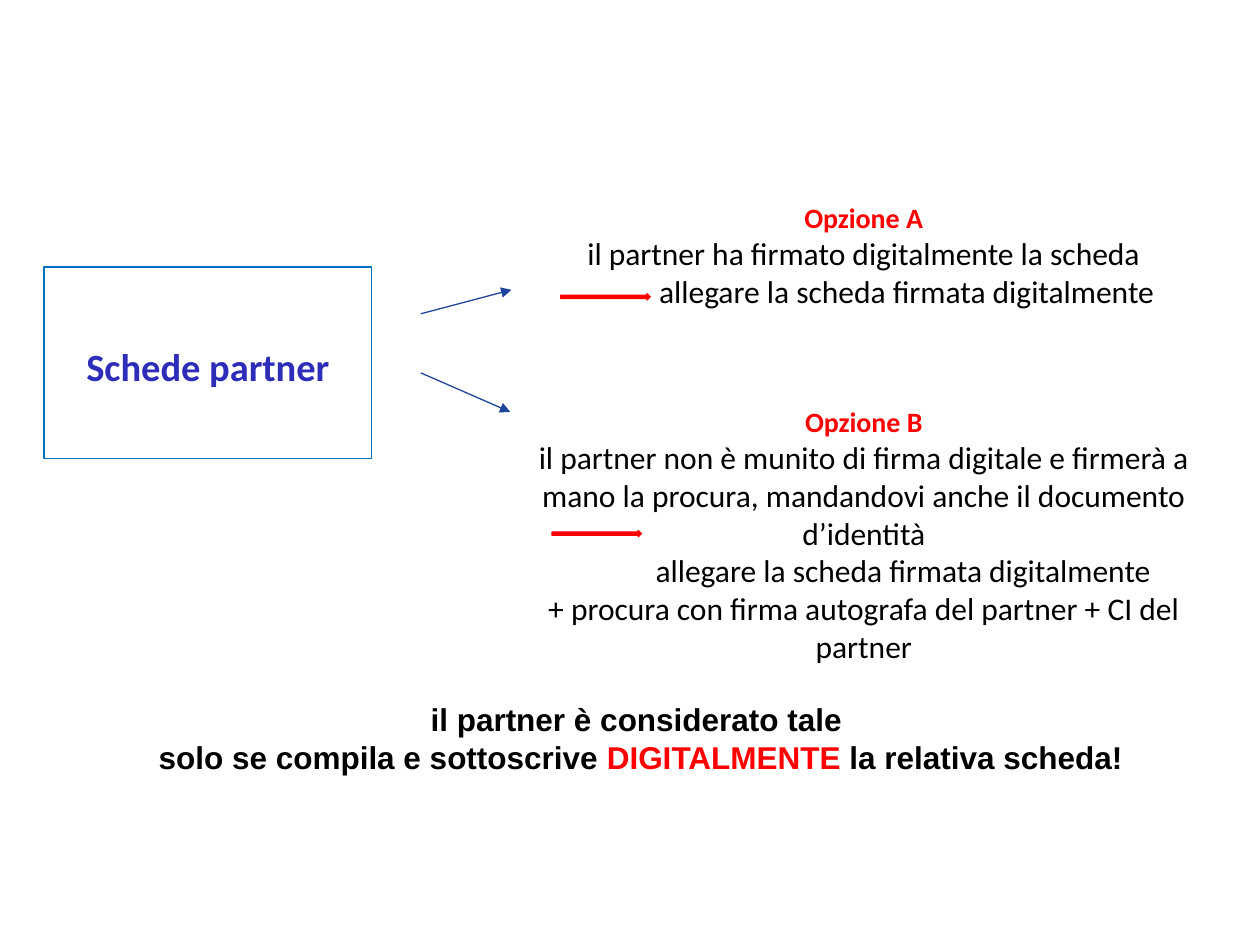
from dataclasses import dataclass

from lxml import etree
from pptx import Presentation
from pptx.dml.color import RGBColor
from pptx.enum import shapes, text
from pptx.oxml import ns
from pptx.util import Pt


@dataclass(frozen=True)
class Theme:
    """Colours, type sizes and fonts of the slide."""
    ink: str = "000000"
    alert: str = "FF0000"
    heading: str = "2D2DB9"
    frame: str = "0070C0"
    branch: str = "21449C"
    heading_size: int = 22
    body_size: int = 18
    option_size: int = 16
    body_font: str = "Calibri"
    closing_font: str = "Arial"
    hairline: float = 0.75


THEME = Theme()
CENTER, RIGHT = text.PP_ALIGN.CENTER, text.PP_ALIGN.RIGHT


def write(paragraph, words, size=THEME.body_size, color=THEME.ink,
          bold=False, font=THEME.body_font):
    """Append one formatted run to a paragraph."""
    run = paragraph.add_run()
    run.text = words
    run.font.name, run.font.size, run.font.bold = font, Pt(size), bold
    run.font.color.rgb = RGBColor.from_string(color)


def add_text_frame(slide, left, top, width, height):
    """Add a wrapping text box and return its text frame."""
    frame = slide.shapes.add_textbox(Pt(left), Pt(top), Pt(width), Pt(height)).text_frame
    frame.word_wrap = True
    return frame


def add_option(slide, box, name, lines):
    """Add a red option name above lines of (words, alignment, indent)."""
    frame = add_text_frame(slide, *box)
    title = frame.paragraphs[0]
    title.alignment = CENTER
    write(title, name, THEME.option_size, THEME.alert, True)
    for words, alignment, indent in lines:
        line = frame.add_paragraph()
        line.alignment = alignment
        if indent:
            line._p.get_or_add_pPr().set("marL", str(Pt(indent)))
        write(line, words)


def add_shape(slide, kind, left, top, width, height, line_color):
    """Add a preset shape with a thin outline and no shadow."""
    shape = slide.shapes.add_shape(kind, Pt(left), Pt(top), Pt(width), Pt(height))
    shape.shadow.inherit = False
    shape.line.color.rgb = RGBColor.from_string(line_color)
    shape.line.width = Pt(THEME.hairline)
    return shape


def add_subject(slide):
    """Add the framed subject that the options branch from."""
    subject = add_shape(slide, shapes.MSO_SHAPE.RECTANGLE, 25.2, 152.6, 187.2, 109.4, THEME.frame)
    subject.fill.background()
    frame = subject.text_frame
    frame.margin_top = Pt(7.6)
    frame.vertical_anchor = text.MSO_ANCHOR.MIDDLE
    frame.paragraphs[0].alignment = CENTER
    write(frame.paragraphs[0], "Schede partner", THEME.heading_size, THEME.heading, True)


def add_pointer(slide, left, top):
    """Add a red block arrow pointing at a required action."""
    pointer = add_shape(slide, shapes.MSO_SHAPE.RIGHT_ARROW, left, top, 51.1, 3.6, THEME.alert)
    pointer.fill.solid()
    pointer.fill.fore_color.rgb = RGBColor.from_string(THEME.alert)


def add_branch(slide, *ends):
    """Add a thin arrow from the subject to an option."""
    branch = slide.shapes.add_connector(shapes.MSO_CONNECTOR.STRAIGHT, *map(Pt, ends))
    branch.line.color.rgb = RGBColor.from_string(THEME.branch)
    branch.line.width = Pt(THEME.hairline)
    etree.SubElement(branch.line._get_or_add_ln(), ns.qn("a:tailEnd"), type="triangle")
    etree.SubElement(branch._element.spPr, ns.qn("a:effectLst"))


def add_closing(slide):
    """Add the closing warning with its key word in red."""
    frame = add_text_frame(slide, 28.8, 396.7, 674.6, 72.7)
    lines = (
        [("il partner è considerato tale ", THEME.ink)],
        [("solo se compila e sottoscrive ", THEME.ink),
         ("DIGITALMENTE ", THEME.alert),
         ("la relativa scheda!", THEME.ink)],
    )
    for index, pieces in enumerate(lines):
        line = frame.add_paragraph() if index else frame.paragraphs[0]
        line.alignment = CENTER
        for words, color in pieces:
            write(line, words, color=color, bold=True, font=THEME.closing_font)


def main():
    """Build and save the slide."""
    deck = Presentation()
    deck.slide_width, deck.slide_height = Pt(720), Pt(540)
    slide = deck.slides.add_slide(deck.slide_layouts.get_by_name("Blank"))
    action = "allegare la scheda firmata digitalmente"
    add_option(slide, (320.4, 110.9, 346.3, 72.7), "Opzione A", [
        ("il partner ha firmato digitalmente la scheda", CENTER, 0),
        (action, RIGHT, 0),
    ])
    add_option(slide, (286.6, 227.5, 414, 113.8), "Opzione B", [
        ("il partner non è munito di firma digitale e firmerà a mano la procura, "
         "mandandovi anche il documento d’identità", CENTER, 0),
        (action, CENTER, 45),
        ("+ procura con firma autografa del partner + CI del partner", CENTER, 0),
    ])
    add_subject(slide)
    add_pointer(slide, 320.4, 167.8)
    add_pointer(slide, 315.4, 303.1)
    add_branch(slide, 240.5, 179.3, 292.3, 165.6)
    add_branch(slide, 240.5, 213.1, 291.6, 235.4)
    add_closing(slide)
    deck.save("out.pptx")


if __name__ == "__main__":
    main()
